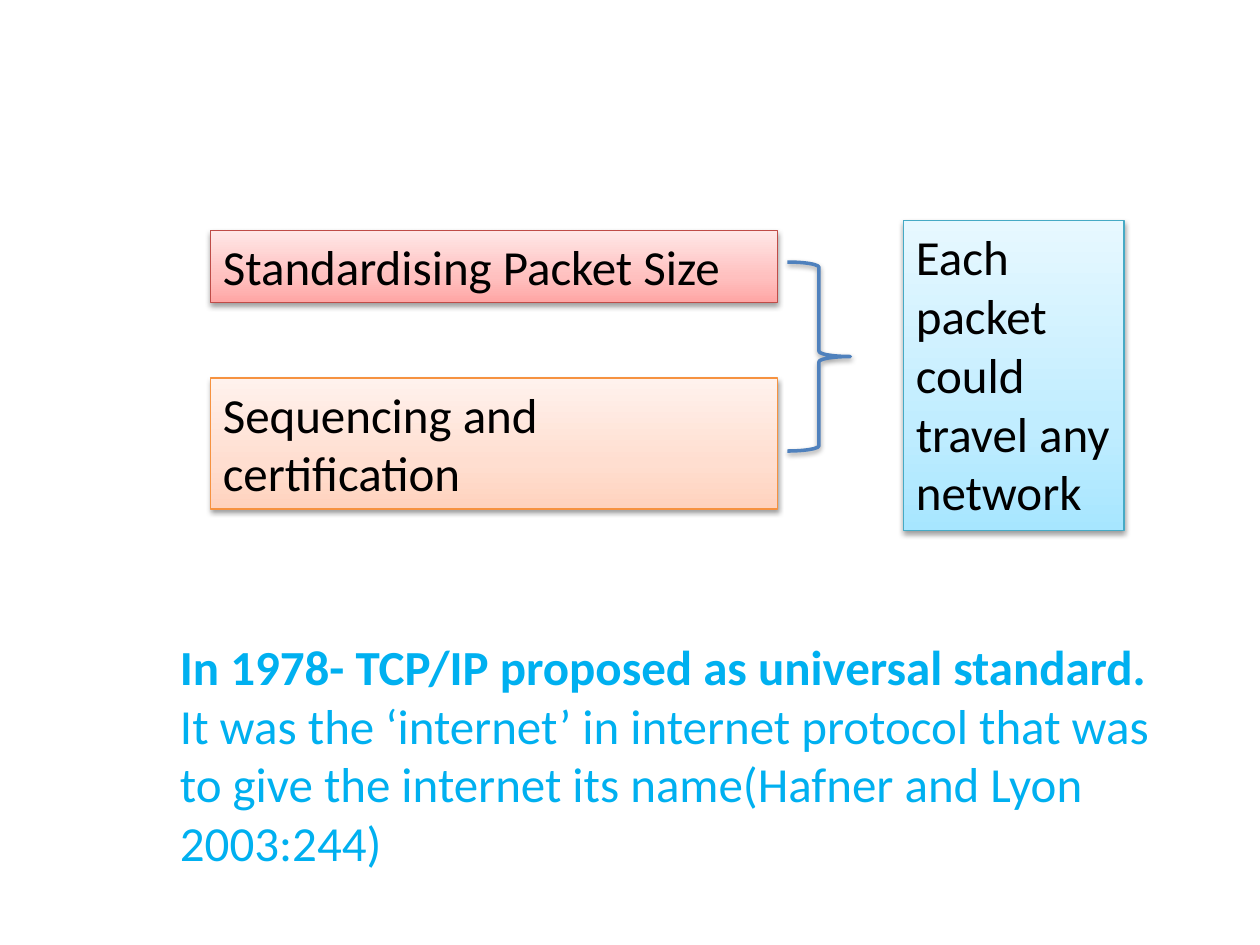
from copy import deepcopy
from dataclasses import dataclass

from lxml.etree import SubElement
from pptx import Presentation
from pptx.dml.color import RGBColor as Rgb
from pptx.enum.shapes import MSO_SHAPE as Preset
from pptx.enum.text import MSO_ANCHOR as Anchor, PP_ALIGN as Align
from pptx.oxml.ns import qn
from pptx.util import Inches, Pt


@dataclass(frozen=True)
class Theme:
    """Colours, gradients and type sizes of the deck."""
    font: str = "Calibri"
    size: int = 28
    ink: str = "000000"
    accent: str = "00B0F0"
    brace: str = "4F81BD"
    red: tuple = ("BF4C48", "FFA6A5", "FFC0BF", "FFE7E7")
    orange: tuple = ("F69240", "FFD2BD", "FFDED0", "FFF2ED")
    aqua: tuple = ("46AAC5", "A7E6FF", "C1EDFF", "E7F8FF")
    stops: tuple = (0, 0.35, 1)


def write(para, text, *, font, size, color, bold=False):
    """Add a formatted span of text to a paragraph."""
    span = para.add_run()
    span.text = text
    span.font.name = font
    span.font.size = Pt(size)
    span.font.bold = bold
    span.font.color.rgb = Rgb.from_string(color)
    para.alignment = Align.LEFT


def cast_shadow(shape):
    """Give a shape a soft shadow straight below it."""
    shape.shadow.inherit = False
    effects = shape._element.spPr.find(qn("a:effectLst"))
    shadow = SubElement(effects, qn("a:outerShdw"), blurRad="40000",
                        dist="20000", dir="5400000", rotWithShape="0")
    color = SubElement(shadow, qn("a:srgbClr"), val="000000")
    SubElement(color, qn("a:alpha"), val="38000")


def fill_gradient(shape, colors, positions):
    """Fill a shape with a gradient that rises from its bottom edge."""
    shape.fill.gradient()
    shape.fill.gradient_angle = 90
    stop_list = shape._element.spPr.find(qn("a:gradFill")).find(qn("a:gsLst"))
    stop_list.append(deepcopy(stop_list[0]))
    for stop, color, position in zip(shape.fill.gradient_stops, colors, positions):
        stop.color.rgb = Rgb.from_string(color)
        stop.position = position


class PageBuilder:
    """Draws styled elements on the current page."""

    def __init__(self, page, theme):
        self.page = page
        self.theme = theme

    def outline(self, preset, place, color, width):
        """Add a preset shape with a coloured line and a shadow."""
        shape = self.page.shapes.add_shape(preset, *map(Inches, place))
        shape.line.color.rgb = Rgb.from_string(color)
        shape.line.width = Pt(width)
        cast_shadow(shape)
        return shape

    def card(self, text, place, palette):
        """Add a gradient box that holds one statement."""
        line, *colors = palette
        box = self.outline(Preset.RECTANGLE, place, line, 0.75)
        fill_gradient(box, colors, self.theme.stops)
        box.text_frame.word_wrap = True
        box.text_frame.vertical_anchor = Anchor.TOP
        write(box.text_frame.paragraphs[0], text, font=self.theme.font,
              size=self.theme.size, color=self.theme.ink)

    def brace(self, place):
        """Add a right brace that joins the boxes on its left."""
        self.outline(Preset.RIGHT_BRACE, place, self.theme.brace, 2).fill.background()

    def note(self, headline, body, place):
        """Add a text box with a bold headline above its body."""
        frame = self.page.shapes.add_textbox(*map(Inches, place)).text_frame
        frame.word_wrap = True
        look = dict(font=self.theme.font, size=self.theme.size, color=self.theme.accent)
        write(frame.paragraphs[0], headline, bold=True, **look)
        write(frame.add_paragraph(), body, **look)


def main():
    """Build the deck and save it."""
    deck = Presentation()
    deck.slide_width, deck.slide_height = Inches(10), Inches(7.5)
    theme = Theme()
    builder = PageBuilder(deck.slides.add_slide(deck.slide_layouts[6]), theme)
    builder.card("Standardising Packet Size", (1.67, 1.83, 4.5, 0.57), theme.red)
    builder.card("Sequencing and certification", (1.67, 3, 4.5, 1.04), theme.orange)
    builder.brace((6.25, 2.08, 0.5, 1.5))
    builder.card("Each packet could travel any network", (7.17, 1.75, 1.75, 2.46), theme.aqua)
    builder.note(
        "In 1978- TCP/IP proposed as universal standard.",
        "It was the ‘internet’ in internet protocol that was to give the internet "
        "its name(Hafner and Lyon 2003:244)",
        (1.33, 5, 8.25, 1.99))
    deck.save("out.pptx")


if __name__ == "__main__":
    main()
